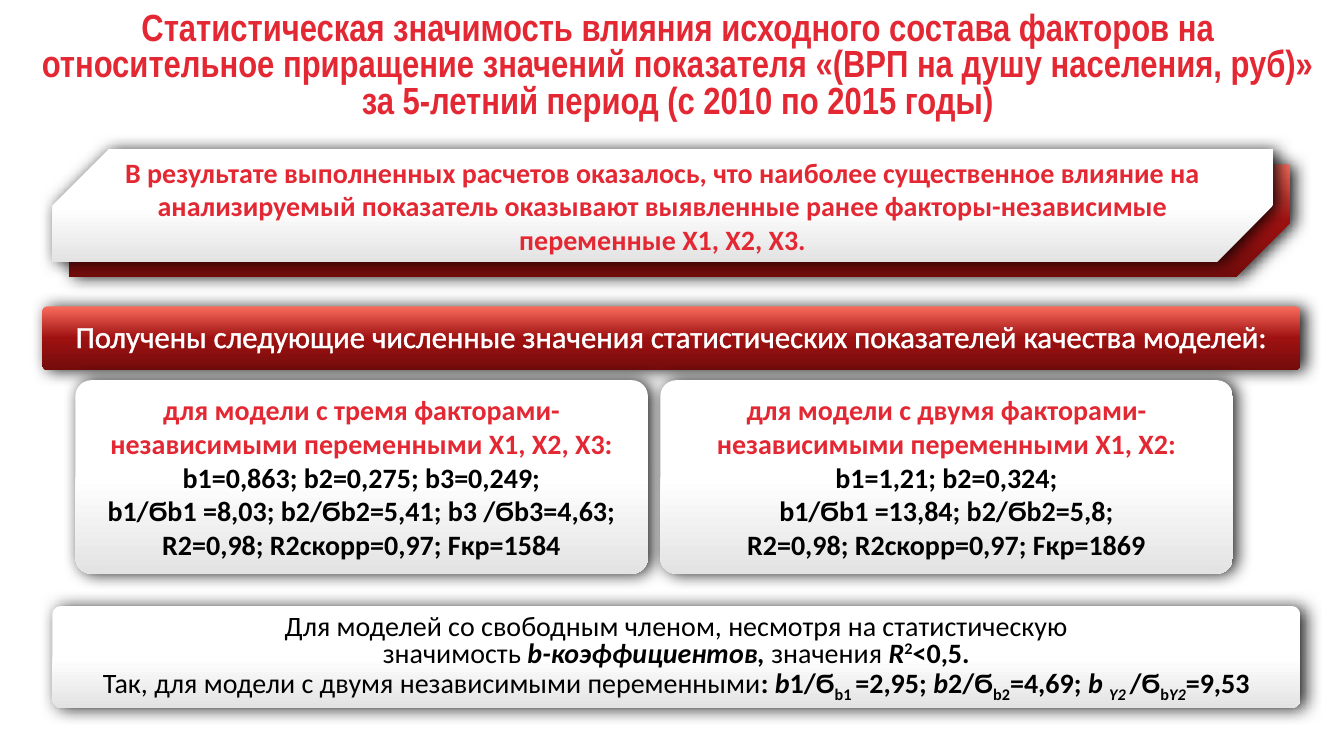
from lxml.etree import SubElement as Sub
from pptx import Presentation
from pptx.dml.color import RGBColor as Rgb
from pptx.enum.shapes import MSO_SHAPE as Geo
from pptx.enum.text import MSO_ANCHOR as Anchor, PP_ALIGN as Align
from pptx.oxml.ns import qn
from pptx.util import Cm, Pt

HUES = {"red": "E32833", "edge": "740C0C", "black": "000000", "white": "FFFFFF"}
FADES = {
    "red": [(0, "FA6C5C"), (50, "9F1111"), (100, "740C0C")],
    "pale": [(0, "FFFFFF"), (50, "FFFFFF"), (100, "E3E3E3")],
}

# A run is (text, marks): b bold, i italic, ^ superscript, _ subscript
TITLE = [
    "Статистическая значимость влияния исходного состава факторов на "
    "относительное приращение значений показателя «(ВРП на душу населения, руб)»",
    "за 5-летний период (с 2010 по 2015 годы)",
]
RESULT = (
    "В результате выполненных расчетов оказалось, что наиболее существенное "
    "влияние на анализируемый показатель оказывают выявленные ранее "
    "факторы-независимые переменные X1, X2, X3."
)
LEAD = "Получены следующие численные значения статистических показателей качества моделей:"
MODELS = [
    ("для модели с тремя факторами-независимыми переменными X1, X2, X3:",
     ["b1=0,863; b2=0,275; b3=0,249;",
      "b1/Ϭb1 =8,03; b2/Ϭb2=5,41; b3 /Ϭb3=4,63;",
      "R2=0,98; R2скорр=0,97; Fкр=1584"]),
    ("для модели с двумя факторами-независимыми переменными X1, X2:",
     ["b1=1,21; b2=0,324;",
      "b1/Ϭb1 =13,84; b2/Ϭb2=5,8;",
      "R2=0,98; R2скорр=0,97; Fкр=1869"]),
]
NOTE = [
    [("Для моделей со свободным членом, несмотря на статистическую", "")],
    [("значимость ", ""), ("b-коэффициентов, ", "bi"), ("значения ", ""),
     ("R", "bi"), ("2", "b^"), ("<0,5.", "b")],
    [("Так, для модели с двумя независимыми переменными", ""), (": ", "b"),
     ("b", "bi"), ("1/Ϭ", "b"), ("b1 ", "b_"), ("=2,95; ", "b"),
     ("b", "bi"), ("2/Ϭ", "b"), ("b2", "b_"), ("=4,69; ", "b"),
     ("b ", "bi"), ("Y2 ", "bi_"), ("/Ϭ", "b"), ("b", "b_"),
     ("Y2", "bi_"), ("=9,53", "b")],
]


def add_run(para, text, marks, size, hue, face="Calibri", edge=None, width=0.75):
    run = para.add_run()
    run.text = text
    font = run.font
    font.name, font.size = face, Pt(size)
    font.bold, font.italic = "b" in marks, "i" in marks
    font.color.rgb = Rgb.from_string(HUES[hue])
    props = run._r.get_or_add_rPr()
    for mark, base in (("^", "30000"), ("_", "-25000")):
        if mark in marks:
            props.set("baseline", base)
    if edge:
        line = Sub(props, qn("a:ln"), w=str(Pt(width)))
        Sub(Sub(line, qn("a:solidFill")), qn("a:srgbClr"), val=HUES[edge])
        props.insert(0, line)


def add_para(frame, runs, space=1.0, **style):
    first = frame.paragraphs[0]
    para = frame.add_paragraph() if first.runs else first
    para.alignment, para.line_spacing = Align.CENTER, space
    for text, marks in runs:
        add_run(para, text, marks, **style)


def add_panel(shapes, geo, box, fade, adjust):
    """Add a shaded, shadowed panel and return its text frame."""
    panel = shapes.add_shape(geo, *map(Cm, box))
    for k, value in enumerate(adjust):
        panel.adjustments[k] = value
    panel.fill.gradient()
    panel.fill.gradient_angle = 270
    stops = panel._element.spPr.find(".//" + qn("a:gsLst"))
    for stop in list(stops):
        stops.remove(stop)
    for pos, hue in FADES[fade]:
        stop = Sub(stops, qn("a:gs"), pos=str(pos * 1000))
        Sub(stop, qn("a:srgbClr"), val=hue)
    panel.line.fill.background()
    panel.shadow.inherit = False
    glow = Sub(panel._element.spPr.find(qn("a:effectLst")), qn("a:outerShdw"),
               blurRad=str(Pt(12)), dist=str(Pt(3)), dir="0",
               algn="ctr", rotWithShape="0")
    Sub(Sub(glow, qn("a:srgbClr"), val=HUES["black"]), qn("a:alpha"), val="87000")
    frame = panel.text_frame
    frame.word_wrap, frame.vertical_anchor = True, Anchor.MIDDLE
    frame.margin_left = frame.margin_right = Cm(0.2)
    frame.margin_top = frame.margin_bottom = Cm(0.2)
    return frame


def main():
    deck = Presentation()
    deck.slide_width, deck.slide_height = Cm(33.87), Cm(19.05)
    slide = deck.slides.add_slide(deck.slide_layouts[5])
    shapes = slide.shapes
    accent = {"size": 20, "hue": "red", "edge": "edge"}
    plain = {"size": 20, "hue": "black"}
    curve = [0.083]

    title = shapes.title
    title.left, title.top, title.width, title.height = map(Cm, (0.61, 0.38, 32.94, 2.62))
    frame = title.text_frame
    frame.word_wrap, frame.vertical_anchor = True, Anchor.MIDDLE
    para = frame.paragraphs[0]
    para.alignment, para.line_spacing = Align.CENTER, 0.8
    for k, text in enumerate(TITLE):
        if k:
            para.add_line_break()
        add_run(para, text, "b", 27, "red", "Arial Narrow", "edge", 0.52)

    pair = shapes.add_group_shape().shapes
    snip = Geo.SNIP_2_DIAG_RECTANGLE
    add_panel(pair, snip, (1.75, 4.14, 30.76, 2.84), "red", (0.481, 0))
    frame = add_panel(pair, snip, (1.32, 3.76, 30.76, 2.84), "pale", (0.5, 0))
    add_para(frame, [(RESULT, "b")], **accent)

    card = Geo.ROUNDED_RECTANGLE
    frame = add_panel(shapes, card, (1.07, 7.72, 31.7, 1.6), "red", curve)
    add_para(frame, [(LEAD, "")], 0.9, size=22, hue="white", edge="white")

    wide, gap = 14.43, 0.31
    for k, (head, lines) in enumerate(MODELS):
        box = (1.9 + k * (wide + gap), 9.58, wide, 4.88)
        frame = add_panel(shapes, card, box, "pale", curve)
        add_para(frame, [(head, "b")], **accent)
        for line in lines:
            add_para(frame, [(line, "b")], **plain)

    frame = add_panel(shapes, card, (1.32, 15.27, 31.45, 2.57), "pale", curve)
    for runs in NOTE:
        add_para(frame, runs, 0.8, **plain)

    deck.save("out.pptx")


if __name__ == "__main__":
    main()
